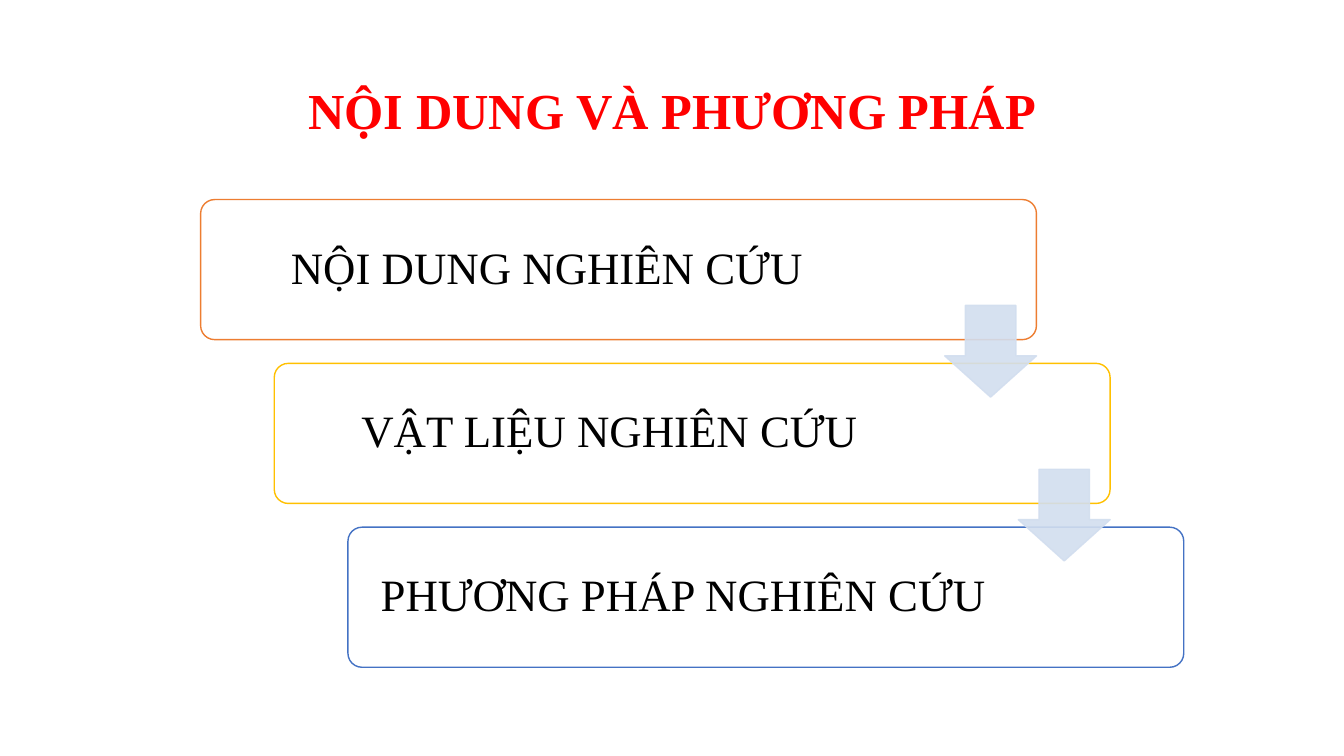
"""Build the slide on research content and methods as a descending staircase of steps."""
import dataclasses

import lxml.etree
import pptx
import pptx.dml.color
import pptx.enum.shapes
import pptx.enum.text
import pptx.oxml.ns
import pptx.util

RGBColor = pptx.dml.color.RGBColor
RED = RGBColor(0xFF, 0x00, 0x00)
BLACK = RGBColor(0x00, 0x00, 0x00)
WHITE = RGBColor(0xFF, 0xFF, 0xFF)
ORANGE = RGBColor(0xED, 0x7D, 0x31)
GOLD = RGBColor(0xFF, 0xC0, 0x00)
BLUE = RGBColor(0x44, 0x72, 0xC4)
PALE_BLUE = RGBColor(0xD2, 0xDE, 0xEF)

FONT = "Times New Roman"
SLIDE_WIDTH = pptx.util.Inches(13.33)
SLIDE_HEIGHT = pptx.util.Inches(7.5)
ARROW_OPACITY = 90


@dataclasses.dataclass(frozen=True)
class Area:
    """A rectangle in percent of the slide's width and height."""
    left: float
    top: float
    width: float
    height: float

    def shifted(self, across: float, down: float) -> "Area":
        """Return the same rectangle moved by percent of the slide."""
        return dataclasses.replace(self, left=self.left + across, top=self.top + down)

    def lengths(self) -> tuple:
        """Return left, top, width and height as slide lengths."""
        return (share(self.left, SLIDE_WIDTH), share(self.top, SLIDE_HEIGHT),
                share(self.width, SLIDE_WIDTH), share(self.height, SLIDE_HEIGHT))


@dataclasses.dataclass(frozen=True)
class Step:
    """One stage of the study, with the room kept free right of its label."""
    label: str
    outline: RGBColor
    right_margin: float


TITLE_AREA = Area(6.9, 5.33, 86.27, 19.33)
FIRST_STEP = Area(14.93, 26.4, 62.19, 18.53)
FIRST_ARROW = Area(70.29, 40.4, 6.83, 12.13)
STEP_ACROSS, STEP_DOWN = 5.48, 21.67
LABEL_LEFT_MARGIN = 1.28

STEPS = [
    Step("NỘI DUNG NGHIÊN CỨU", ORANGE, 11.93),
    Step("VẬT LIỆU NGHIÊN CỨU", GOLD, 13.58),
    Step("PHƯƠNG PHÁP NGHIÊN CỨU", BLUE, 13.58),
]


def share(percent: float, whole: int) -> int:
    """Return a percentage of a length."""
    return pptx.util.Emu(round(whole * percent / 100))


def write(frame, text: str, size: int, color: RGBColor, bold: bool = False) -> None:
    """Write one centred line into a text frame."""
    frame.word_wrap = True
    frame.vertical_anchor = pptx.enum.text.MSO_ANCHOR.MIDDLE
    paragraph = frame.paragraphs[0]
    paragraph.alignment = pptx.enum.text.PP_ALIGN.CENTER
    paragraph.line_spacing = 0.9
    run = paragraph.add_run()
    run.text = text
    run.font.name = FONT
    run.font.size = pptx.util.Pt(size)
    run.font.bold = bold
    run.font.color.rgb = color


def add_figure(slide, kind, area: Area, adjustments: list, fill: RGBColor, outline: RGBColor):
    """Add a flat preset shape and return it."""
    figure = slide.shapes.add_shape(kind, *area.lengths())
    for index, value in enumerate(adjustments):
        figure.adjustments[index] = value
    figure.shadow.inherit = False
    figure.fill.solid()
    figure.fill.fore_color.rgb = fill
    figure.line.color.rgb = outline
    figure.line.width = pptx.util.Pt(1)
    return figure


def add_step(slide, step: Step, area: Area) -> None:
    """Add a rounded box holding the label of a step."""
    box = add_figure(slide, pptx.enum.shapes.MSO_SHAPE.ROUNDED_RECTANGLE,
                     area, [0.1], WHITE, step.outline)
    box.text_frame.margin_left = share(LABEL_LEFT_MARGIN, SLIDE_WIDTH)
    box.text_frame.margin_right = share(step.right_margin, SLIDE_WIDTH)
    write(box.text_frame, step.label, 32, BLACK)


def add_arrow(slide, area: Area) -> None:
    """Add a slightly transparent arrow leading to the next step."""
    arrow = add_figure(slide, pptx.enum.shapes.MSO_SHAPE.DOWN_ARROW,
                       area, [0.55, 0.45], PALE_BLUE, PALE_BLUE)
    for color in arrow.element.spPr.iter(pptx.oxml.ns.qn("a:srgbClr")):
        alpha = lxml.etree.SubElement(color, pptx.oxml.ns.qn("a:alpha"))
        alpha.set("val", str(ARROW_OPACITY * 1000))


def main() -> None:
    """Build and save the presentation."""
    presentation = pptx.Presentation()
    presentation.slide_width = SLIDE_WIDTH
    presentation.slide_height = SLIDE_HEIGHT
    slide = presentation.slides.add_slide(presentation.slide_layouts[5])

    title = slide.shapes.title
    title.left, title.top, title.width, title.height = TITLE_AREA.lengths()
    write(title.text_frame, "NỘI DUNG VÀ PHƯƠNG PHÁP", 36, RED, bold=True)

    for index, step in enumerate(STEPS):
        add_step(slide, step, FIRST_STEP.shifted(index * STEP_ACROSS, index * STEP_DOWN))
    for index in range(len(STEPS) - 1):
        add_arrow(slide, FIRST_ARROW.shifted(index * STEP_ACROSS, index * STEP_DOWN))

    presentation.save("out.pptx")


if __name__ == "__main__":
    main()
